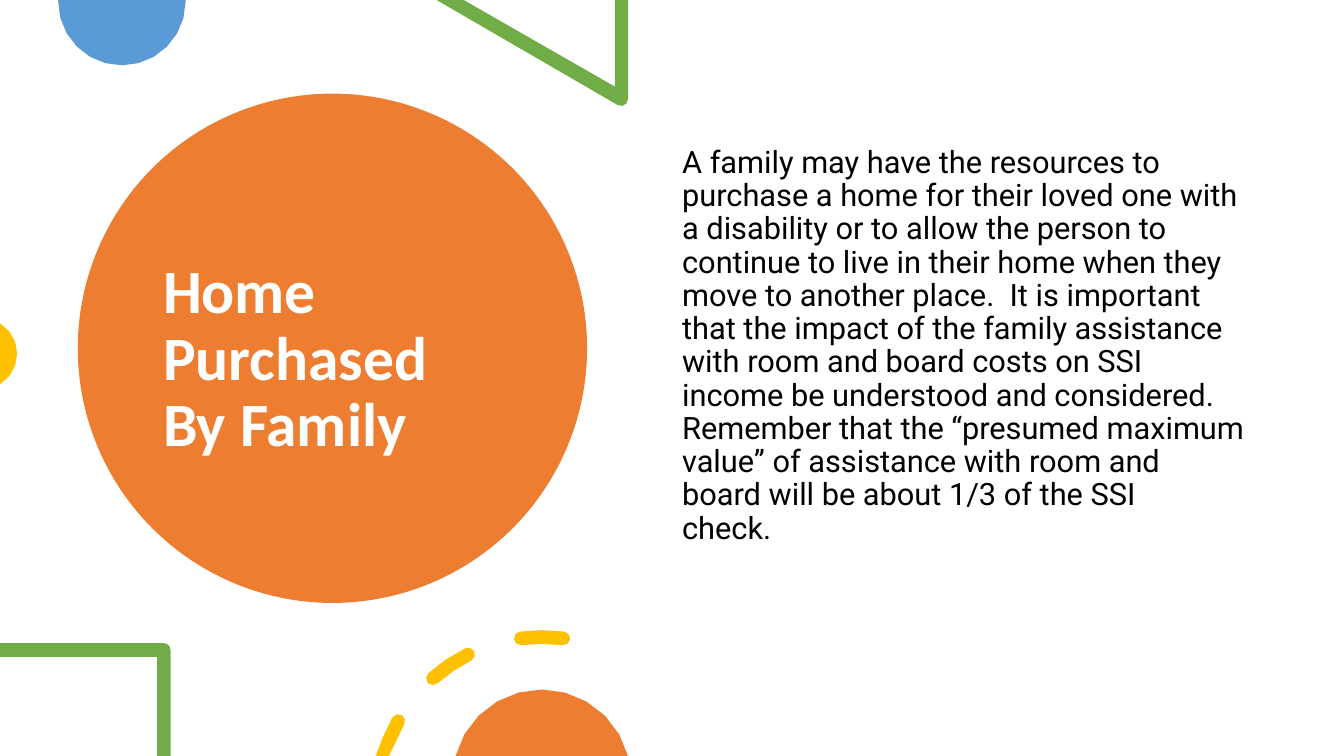
"""Build a slide on homes purchased by family, framed by cropped geometric shapes."""
import math

from pptx import Presentation
from pptx import util as u
from pptx.dml.color import RGBColor
from pptx.enum import shapes, text

WIDTH, HEIGHT = 960, 540
COLORS = {
    "orange": "ED7D31",
    "blue": "5B9BD5",
    "green": "70AD47",
    "yellow": "FFC000",
    "white": "FFFFFF",
    "black": "000000",
}
HARD_SPACE = chr(160)
TITLE = "Home Purchased By Family"
BODY = (
    "A~family may have the resources to purchase a home for~their loved one "
    "with a disability~or to allow~the person~to continue to live in their home "
    "when they move to another place.~~It is important that~the impact of~"
    "the family assistance with room and board costs on~SSI income~be understood "
    "and considered.~ Remember that the “presumed maximum value” of~"
    "assistance~with room and board~will be~about~1/3 of~the~SSI check.~~~"
).replace("~", HARD_SPACE)


def arc(center, radius, start, end, steps):
    """Return points along a circle, with angles in degrees clockwise from the right."""
    angles = [math.radians(start + (end - start) * i / steps) for i in range(steps + 1)]
    return [(center[0] + radius * math.cos(a), center[1] + radius * math.sin(a)) for a in angles]


def ring_dash(center, radius, half_width, start, end):
    """Return the outline of a round-capped ring segment, cropped at the slide bottom."""
    tail, head = arc(center, radius, start, end, 1)
    outline = (
        arc(center, radius + half_width, start, end, 2)
        + arc(head, half_width, end, end + 180, 4)[1:-1]
        + arc(center, radius - half_width, end, start, 2)
        + arc(tail, half_width, start + 180, start + 360, 4)[1:-1]
    )
    return [(x, min(y, HEIGHT)) for x, y in outline]


def paint(shape, color):
    """Give a shape a plain fill with no line or shadow."""
    shape.fill.solid()
    shape.fill.fore_color.rgb = RGBColor.from_string(COLORS[color])
    shape.line.fill.background()
    shape.shadow.inherit = False


def add_outline(slide, contours, color):
    """Add one filled freeform made of closed contours."""
    contours = [[(u.Pt(x), u.Pt(y)) for x, y in contour] for contour in contours]
    builder = slide.shapes.build_freeform(*contours[0][0])
    for index, contour in enumerate(contours):
        if index:
            builder.move_to(*contour[0])
        builder.add_line_segments(contour[1:], close=True)
    paint(builder.convert_to_shape(), color)


def add_text(slide, box, words, font, size, color, bold=False,
             anchor=text.MSO_ANCHOR.TOP, margin_top=3.6):
    """Add a wrapped, left-aligned text box."""
    frame = slide.shapes.add_textbox(*map(u.Pt, box)).text_frame
    frame.word_wrap = True
    frame.vertical_anchor = anchor
    frame.margin_top = u.Pt(margin_top)
    frame.text = words
    paragraph = frame.paragraphs[0]
    paragraph.line_spacing = 0.9
    run_font = paragraph.runs[0].font
    run_font.name, run_font.size, run_font.bold = font, u.Pt(size), bold
    run_font.color.rgb = RGBColor.from_string(COLORS[color])


def main():
    """Compose and save the slide."""
    deck = Presentation()
    deck.slide_width, deck.slide_height = u.Pt(WIDTH), u.Pt(HEIGHT)
    slide = deck.slides.add_slide(deck.slide_layouts[6])

    title_disc = slide.shapes.add_shape(
        shapes.MSO_SHAPE.OVAL, *map(u.Pt, (55.6, 66.9, 363.8, 363.8)))
    paint(title_disc, "orange")
    add_text(slide, (109.4, 97.2, 254.9, 320.4), TITLE, "Calibri", 44, "white",
             bold=True, anchor=text.MSO_ANCHOR.MIDDLE)

    top_disc = arc((87.1, 1.2), 45.5, 0, 180, 12) + [(41.6, 0), (132.6, 0)]
    add_outline(slide, [top_disc], "blue")

    triangle = [(448.6, 0), (439.2, 0), (439.2, 61.9), (331.2, 0), (311.8, 0)]
    add_outline(slide, [triangle + arc((443.7, 70.8), 4.9, 120, 0, 3)], "green")

    add_outline(slide, [arc((-13.1, 252.7), 25.4, -59, 59, 6)], "yellow")

    add_text(slide, (480.2, 64.8, 417.6, 434.2), BODY, "Roboto", 22, "black", margin_top=40)

    square = arc((117, 464.2), 4.8, 270, 360, 3)
    square += [(121.8, 540), (112.3, 540), (112.3, 469.2), (0, 469.2), (0, 459.4)]
    add_outline(slide, [square], "green")

    dashes = [ring_dash((387.2, 572.9), 117.9, 4.9, start, start + 14.8)
              for start in (194.6, 228.6, 262.6)]
    add_outline(slide, dashes, "yellow")

    add_outline(slide, [arc((387, 556.2), 63.7, 194.7, 345.3, 10)], "orange")

    deck.save("out.pptx")


if __name__ == "__main__":
    main()
